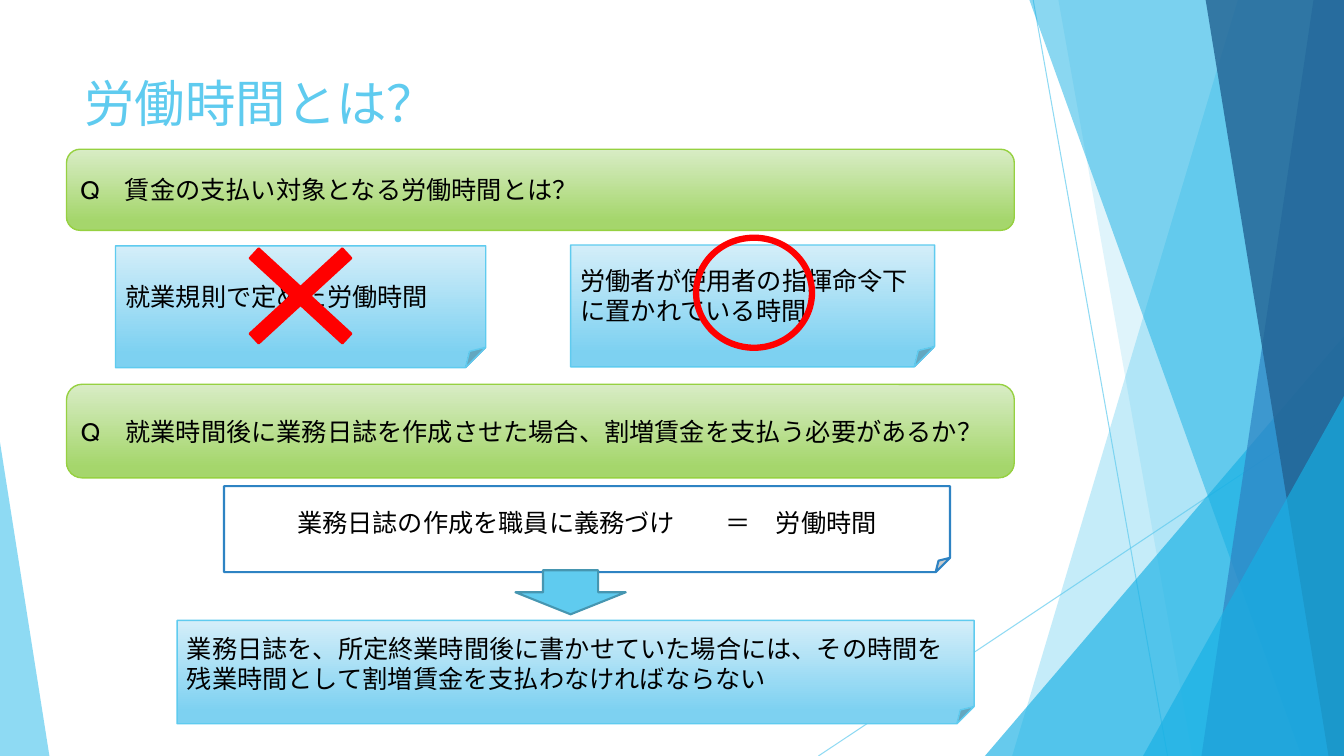
from lxml import etree
from pptx import Presentation
from pptx import util as u
from pptx.dml.color import RGBColor
from pptx.enum import shapes, text
from pptx.oxml import ns

FONT = "Cabin"
SKY = RGBColor(0x5F, 0xCB, 0xEF)
CYAN = RGBColor(0x17, 0xB0, 0xE4)
BLUE = RGBColor(0x2E, 0x83, 0xC3)
NAVY = RGBColor(0x22, 0x62, 0x92)
ARROW_EDGE = RGBColor(0x46, 0x96, 0xB1)
LIME = RGBColor(0x96, 0xD1, 0x41)
GREEN_FADE = (RGBColor(0xD8, 0xEC, 0xC5), RGBColor(0xA5, 0xD6, 0x6C))
SKY_FADE = (RGBColor(0xD4, 0xEE, 0xF9), RGBColor(0x7D, 0xD1, 0xF1))
RED = RGBColor(0xFF, 0, 0)
WHITE = RGBColor(0xFF, 0xFF, 0xFF)
BLACK = RGBColor(0, 0, 0)

WIDTH, HEIGHT = 960, 540
KIND = shapes.MSO_SHAPE


class Page:
    """Holds the slide and the shared style; all lengths are points."""

    def __init__(self, slide):
        self.slide = slide

    def set_opacity(self, item, percent):
        for color in item._element.spPr.iter(ns.qn("a:srgbClr")):
            alpha = etree.SubElement(color, ns.qn("a:alpha"))
            alpha.set("val", str(percent * 1000))

    def paint(self, item, fill=None, edge=None, weight=1):
        item.shadow.inherit = False
        if fill is None:
            item.fill.background()
        elif isinstance(fill, tuple) and not isinstance(fill, RGBColor):
            item.fill.gradient()
            item.fill.gradient_angle = 270
            for stop, color, position in zip(item.fill.gradient_stops, fill, (0, 0.88)):
                stop.color.rgb = color
                stop.position = position
        else:
            item.fill.solid()
            item.fill.fore_color.rgb = fill
        if edge is None:
            item.line.fill.background()
        else:
            item.line.color.rgb = edge
            item.line.width = u.Pt(weight)

    def add_words(self, item, words, size=18, color=BLACK, align=text.PP_ALIGN.LEFT,
                  anchor=text.MSO_ANCHOR.MIDDLE):
        frame = item.text_frame
        frame.word_wrap = True
        frame.vertical_anchor = anchor
        paragraph = frame.paragraphs[0]
        paragraph.alignment = align
        run = paragraph.add_run()
        run.text = words
        run.font.name = FONT
        run.font.size = u.Pt(size)
        run.font.color.rgb = color

    def shape(self, kind, box, fill=None, edge=None, weight=1, adjust=None):
        item = self.slide.shapes.add_shape(kind, *map(u.Pt, box))
        self.paint(item, fill, edge, weight)
        if adjust is not None:
            item.adjustments[0] = adjust
        return item

    def hairline(self, start, end):
        line = self.slide.shapes.add_connector(
            shapes.MSO_CONNECTOR.STRAIGHT, *map(u.Pt, start + end))
        line.line.color.rgb = SKY
        line.line.width = u.Pt(0.75)
        self.set_opacity(line, 70)
        etree.SubElement(line._element.spPr, ns.qn("a:effectLst"))

    def band(self, top_x, bottom_x, color, opacity):
        """A full-height area from a slanted left side to the slide's right edge."""
        corners = [(WIDTH, 0), (WIDTH, HEIGHT), (bottom_x, HEIGHT)]
        builder = self.slide.shapes.build_freeform(u.Pt(top_x), 0)
        builder.add_line_segments([(u.Pt(x), u.Pt(y)) for x, y in corners])
        item = builder.convert_to_shape()
        self.paint(item, color)
        self.set_opacity(item, opacity)

    def wedge(self, box, color, opacity, apex):
        item = self.shape(KIND.ISOSCELES_TRIANGLE, box, color, adjust=apex)
        self.set_opacity(item, opacity)

    def title(self, box, words):
        item = self.slide.shapes.add_textbox(*map(u.Pt, box))
        self.add_words(item, words, 36, SKY, anchor=text.MSO_ANCHOR.TOP)

    def question(self, top, height, words):
        item = self.shape(KIND.ROUNDED_RECTANGLE, (47.5, top, 677, height), GREEN_FADE, LIME)
        self.add_words(item, words)

    def note(self, box, words, fill=SKY_FADE, edge=SKY, weight=1, align=text.PP_ALIGN.LEFT):
        item = self.shape(KIND.FOLDED_CORNER, box, fill, edge, weight)
        self.add_words(item, words, align=align)


def main():
    deck = Presentation()
    deck.slide_width, deck.slide_height = u.Pt(WIDTH), u.Pt(HEIGHT)
    page = Page(deck.slides.add_slide(deck.slide_layouts[6]))

    # Faceted background
    page.hairline((738, 0), (834, HEIGHT))
    page.hairline((WIDTH, 290), (584.6, HEIGHT))
    page.band(884.2, 723, SKY, 36)
    page.band(756, 851.8, SKY, 20)
    page.wedge((703.5, 240, 256.5, 300), CYAN, 66, apex=1)
    page.band(735.3, 929.5, CYAN, 50)
    page.band(938.2, 858.2, BLUE, 70)
    page.band(861.2, 949, NAVY, 80)
    page.wedge((816.5, 283, 143.5, 257), CYAN, 66, apex=1)
    page.wedge((0, 316, 35.3, 224), SKY, 70, apex=0)

    # Title and questions
    page.title((53.3, 48.2, 677, 103.7), "労働時間とは？")
    page.question(106.6, 57.9, "Q　賃金の支払い対象となる労働時間とは？")
    page.question(274.5, 66.8, "Q　就業時間後に業務日誌を作成させた場合、割増賃金を支払う必要があるか？")

    # Two candidate answers with their marks
    page.note((82.5, 175.6, 264.5, 87), "就業規則で定めた労働時間")
    page.note((407.6, 175, 260, 87), "労働者が使用者の指揮命令下に置かれている時間")
    page.shape(KIND.FLOWCHART_CONNECTOR, (497.2, 169.8, 82.8, 78.6), edge=RED, weight=4.5)
    page.shape(KIND.MATH_MULTIPLY, (151, 152.8, 127.4, 117.2), RED, RED, 1.5, adjust=0.081)

    # Reasoning and conclusion
    page.note((160, 347.3, 518.6, 61.4), "業務日誌の作成を職員に義務づけ　　＝　労働時間",
              WHITE, BLUE, 1.5, text.PP_ALIGN.CENTER)
    page.note((126.5, 443.2, 569.3, 73.8),
              "業務日誌を、所定終業時間後に書かせていた場合には、"
              "その時間を残業時間として割増賃金を支払わなければならない")
    page.shape(KIND.DOWN_ARROW, (368.2, 407.3, 78.8, 31.5), SKY, ARROW_EDGE, 1.5)

    deck.save("out.pptx")


if __name__ == "__main__":
    main()
